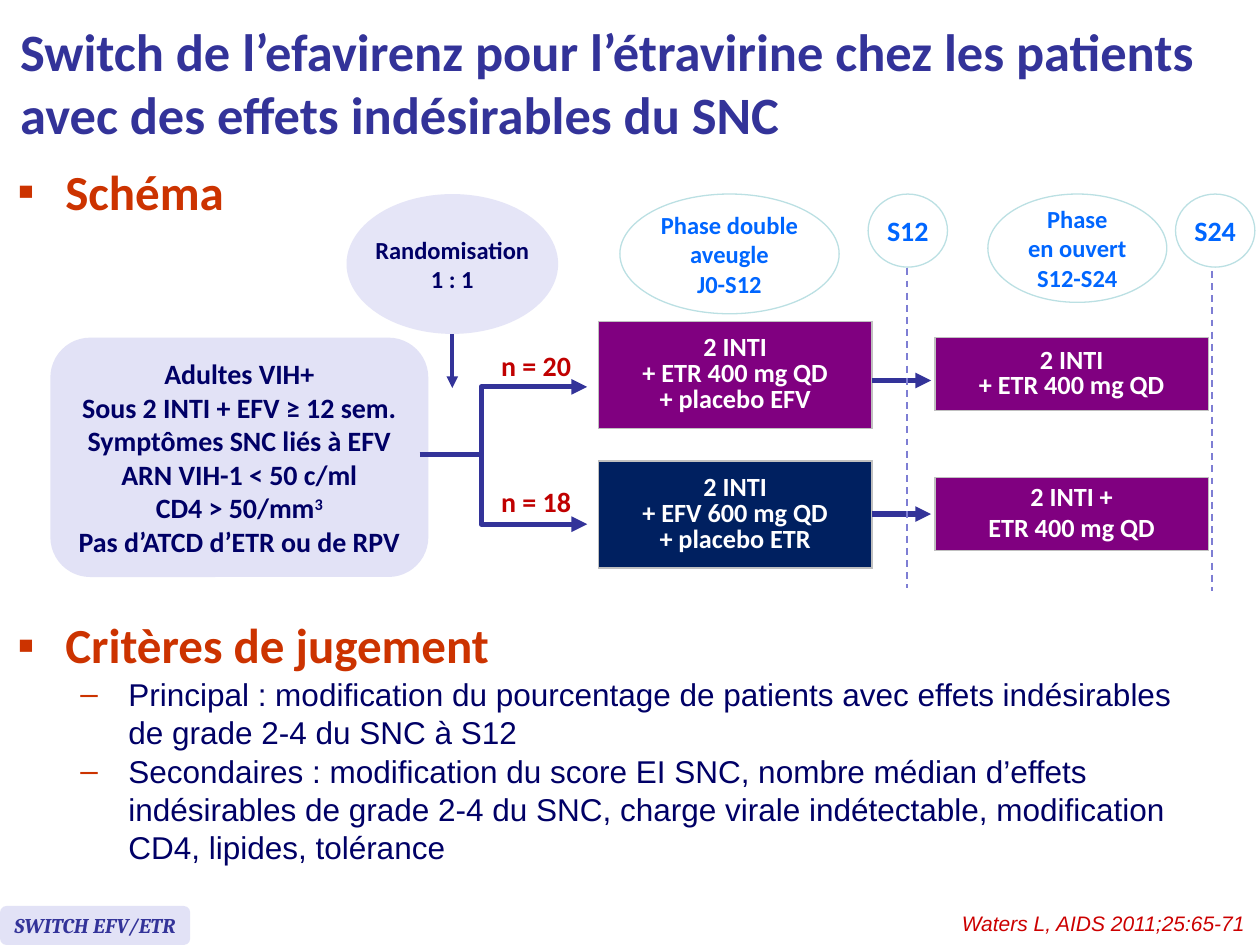
from dataclasses import dataclass

from lxml import etree
from pptx import Presentation
from pptx.dml.color import RGBColor
from pptx.enum.dml import MSO_LINE_DASH_STYLE as Dash
from pptx.enum.shapes import MSO_CONNECTOR as Conn, MSO_SHAPE as Shape
from pptx.enum.text import MSO_ANCHOR as Anchor, MSO_AUTO_SIZE as Auto, PP_ALIGN as Align
from pptx.oxml.ns import qn
from pptx.util import Inches, Pt


@dataclass(frozen=True)
class Theme:
    """Colours, fonts and type sizes of the slide."""
    indigo: str = "333399"
    navy: str = "000066"
    rust: str = "CC3300"
    red: str = "CC0000"
    dark_red: str = "C00000"
    blue: str = "0066FF"
    pale_blue: str = "BBE0E3"
    lavender: str = "E2E2F6"
    lilac: str = "E5E5F7"
    dash: str = "7E7ED4"
    purple: str = "800080"
    deep: str = "002060"
    grey: str = "C0C0C0"
    white: str = "FFFFFF"
    heading: str = "Calibri"
    body: str = "Arial"
    tag: str = "Cambria"
    title_size: int = 30
    head_size: int = 28
    body_size: int = 18
    label_size: int = 16
    cell_size: int = 15
    phase_size: int = 14
    small_size: int = 12


T = Theme()


def rgb(code):
    """Turn a hex code into a colour."""
    return RGBColor.from_string(code)


def inches(*values):
    """Turn numbers into lengths."""
    return [Inches(v) for v in values]


def style(p, size, color, font=T.heading, bold=True, italic=False, align=Align.CENTER):
    """Format a paragraph and its runs."""
    p.alignment = align
    for r in p.runs:
        f = r.font
        f.name, f.size, f.bold, f.italic = font, Pt(size), bold, italic
        f.color.rgb = rgb(color)


def write(tf, text, size, color, wrap=False, **look):
    """Fill a text frame with lines of one style."""
    tf.word_wrap = wrap
    tf.text = text
    for p in tf.paragraphs:
        style(p, size, color, **look)


def add_label(s, box, text, size, color, **look):
    """Add a text box."""
    tb = s.shapes.add_textbox(*inches(*box))
    write(tb.text_frame, text, size, color, **look)


def add_block(s, kind, box, fill, text, size, color, line=None, **look):
    """Add a filled shape with centred text."""
    sp = s.shapes.add_shape(kind, *inches(*box))
    sp.shadow.inherit = False
    sp.fill.solid()
    sp.fill.fore_color.rgb = rgb(fill)
    if line:
        sp.line.color.rgb = rgb(line)
        sp.line.width = Pt(0.75)
    else:
        sp.line.fill.background()
    sp.text_frame.vertical_anchor = Anchor.MIDDLE
    write(sp.text_frame, text, size, color, **look)
    return sp


def add_heads(shape, *ends):
    """Put triangle arrowheads on the named ends of a line."""
    ln = shape._element.spPr.find(qn("a:ln"))
    for end in ends:
        etree.SubElement(ln, qn(f"a:{end}"), type="triangle")


def add_line(s, x1, y1, x2, y2, width=3, color=T.indigo, arrow=False, dash=False):
    """Add a straight connector."""
    cx = s.shapes.add_connector(Conn.STRAIGHT, *inches(x1, y1, x2, y2))
    cx.line.color.rgb = rgb(color)
    cx.line.width = Pt(width)
    if dash:
        cx.line.dash_style = Dash.DASH
    if arrow:
        add_heads(cx, "tailEnd")
    etree.SubElement(cx._element.spPr, qn("a:effectLst"))


def add_fork(s, x, y, w, h):
    """Add the bracket that leads to both arms."""
    fb = s.shapes.build_freeform(*inches(x + w, y), scale=1.0)
    fb.add_line_segments([inches(x, y), inches(x, y + h), inches(x + w, y + h)], close=False)
    sp = fb.convert_to_shape()
    sp.shadow.inherit = False
    sp.fill.background()
    sp.line.color.rgb = rgb(T.indigo)
    sp.line.width = Pt(3)
    add_heads(sp, "headEnd", "tailEnd")


def add_regimen(s, box, text, fill):
    """Add a treatment as a one-cell table."""
    table = s.shapes.add_table(1, 1, *inches(*box)).table
    table.first_row = table.horz_banding = False
    cell = table.cell(0, 0)
    tcPr = cell._tc.get_or_add_tcPr()
    for side in ("lnL", "lnR", "lnT", "lnB"):
        ln = etree.SubElement(tcPr, qn(f"a:{side}"), w=str(Pt(1)))
        solid = etree.SubElement(ln, qn("a:solidFill"))
        etree.SubElement(solid, qn("a:srgbClr"), val=T.grey)
    cell.fill.solid()
    cell.fill.fore_color.rgb = rgb(fill)
    cell.vertical_anchor = Anchor.MIDDLE
    write(cell.text_frame, text, T.cell_size, T.white, wrap=True)
    for i, p in enumerate(cell.text_frame.paragraphs):
        p.line_spacing = 0.8
        p.space_before = Pt(3 if i else 0)


def add_title(s, x, y, w, h):
    """Place and format the title."""
    title = s.shapes.title
    title.left, title.top, title.width, title.height = inches(x, y, w, h)
    tf = title.text_frame
    write(tf, "Switch de l’efavirenz pour l’étravirine chez les patients "
          "avec des effets indésirables du SNC",
          T.title_size, T.indigo, wrap=True, align=Align.LEFT)
    tf.vertical_anchor = Anchor.MIDDLE
    tf.auto_size = Auto.NONE


def add_section(s, box, heading, items=()):
    """Add a bulleted heading with its sub-items."""
    tf = s.shapes.add_textbox(*inches(*box)).text_frame
    write(tf, "\n".join([heading, *items]), T.body_size, T.navy, wrap=True,
          font=T.body, bold=False, align=Align.LEFT)
    for i, p in enumerate(tf.paragraphs):
        pPr = p._p.get_or_add_pPr()
        pPr.set("marL", str(Inches(0.88 if i else 0.38)))
        pPr.set("indent", str(Inches(-0.38)))
        color = etree.SubElement(pPr, qn("a:buClr"))
        etree.SubElement(color, qn("a:srgbClr"), val=T.rust)
        etree.SubElement(pPr, qn("a:buFont"), typeface=T.body)
        etree.SubElement(pPr, qn("a:buChar"), char="–" if i else "▪")
        p.space_before = Pt(0.8 if i else 0)
    style(tf.paragraphs[0], T.head_size, T.rust, align=Align.LEFT)


def add_population(s, x, y, w, h):
    """Add the inclusion criteria."""
    sp = add_block(s, Shape.ROUNDED_RECTANGLE, (x, y, w, h), T.lavender,
                   "Adultes VIH+\nSous 2 INTI + EFV ≥ 12 sem.\nSymptômes SNC liés à EFV\n"
                   "ARN VIH-1 < 50 c/ml\nCD4 > 50/mm\nPas d’ATCD d’ETR ou de RPV",
                   T.label_size, T.navy)
    p = sp.text_frame.paragraphs[4]
    r = p.add_run()
    r.text = "3"
    style(p, T.label_size, T.navy)
    r.font._element.set("baseline", "30000")


def add_scheme(s, x, y):
    """Draw the trial design from its top left corner."""
    add_line(s, x + 3.19, y + 1.11, x + 3.19, y + 1.54, width=2.25, arrow=True)
    add_block(s, Shape.OVAL, (x + 2.35, y, 1.68, 1.11), T.lilac,
              "Randomisation\n1 : 1", T.phase_size, T.navy)
    add_population(s, x, y + 1.14, 3, 1.9)
    add_fork(s, x + 3.42, y + 1.53, 0.84, 1.09)
    add_line(s, x + 2.93, y + 2.07, x + 3.41, y + 2.07)
    arms = [
        ("n = 20", "2 INTI\v+ ETR 400 mg QD\v+ placebo EFV", T.purple,
         "2 INTI\v+ ETR 400 mg QD"),
        ("n = 18", "2 INTI\v+ EFV 600 mg QD\v+ placebo ETR", T.deep,
         "2 INTI +\nETR 400 mg QD"),
    ]
    for i, (count, blinded, fill, opened) in enumerate(arms):
        add_label(s, (x + 3.46, y + 1.18 + 1.08 * i, 0.79, 0.37), count, T.label_size, T.dark_red)
        top = y + 1.11 * i
        add_regimen(s, (x + 4.35, top + 1.01, 2.17, 0.85), blinded, fill)
        add_regimen(s, (x + 7.02, top + 1.14, 2.17, 0.58), opened, T.purple)
        arrow_y = y + 1.48 + 1.06 * i
        add_line(s, x + 6.52, arrow_y, x + 6.99, arrow_y, arrow=True)
    phases = [
        (4.52, 1.74, 0.95, "Phase double\naveugle\nJ0-S12", T.phase_size),
        (7.44, 1.42, 0.86, "Phase\nen ouvert\nS12-S24", T.phase_size),
        (6.49, 0.63, 0.58, "S12", T.label_size),
        (8.93, 0.63, 0.58, "S24", T.label_size),
    ]
    for dx, w, h, text, size in phases:
        add_block(s, Shape.OVAL, (x + dx, y, w, h), T.white, text, size, T.blue, line=T.pale_blue)
    for dx, dy in ((9.22, 0.61), (6.8, 0.59)):
        add_line(s, x + dx, y + dy, x + dx, y + dy + 2.54, width=1, color=T.dash, dash=True)


def add_footer(s, y):
    """Add the study tag and the reference."""
    add_block(s, Shape.ROUNDED_RECTANGLE, (0, y + 0.01, 1.51, 0.31), T.lavender,
              "SWITCH EFV/ETR", T.small_size, T.indigo, font=T.tag, italic=True)
    add_label(s, (6.48, y, 3.5, 0.3), "Waters L, AIDS 2011;25:65-71", T.small_size, T.red,
              wrap=True, font=T.body, bold=False, italic=True, align=Align.RIGHT)


def main():
    """Build and save the slide."""
    prs = Presentation()
    prs.slide_width, prs.slide_height = inches(10, 7.5)
    s = prs.slides.add_slide(prs.slide_layouts[5])
    add_title(s, 0.06, 0.05, 9.91, 1.21)
    add_section(s, (0.04, 1.23, 1.98, 0.63), "Schéma")
    add_section(s, (0.04, 4.83, 9.55, 2.32), "Critères de jugement", [
        "Principal : modification du pourcentage de patients avec effets indésirables "
        "de grade 2-4 du SNC à S12",
        "Secondaires : modification du score EI SNC, nombre médian d’effets indésirables "
        "de grade 2-4 du SNC, charge virale indétectable, modification CD4, lipides, tolérance",
    ])
    add_scheme(s, 0.4, 1.54)
    add_footer(s, 7.18)
    prs.save("out.pptx")


if __name__ == "__main__":
    main()
